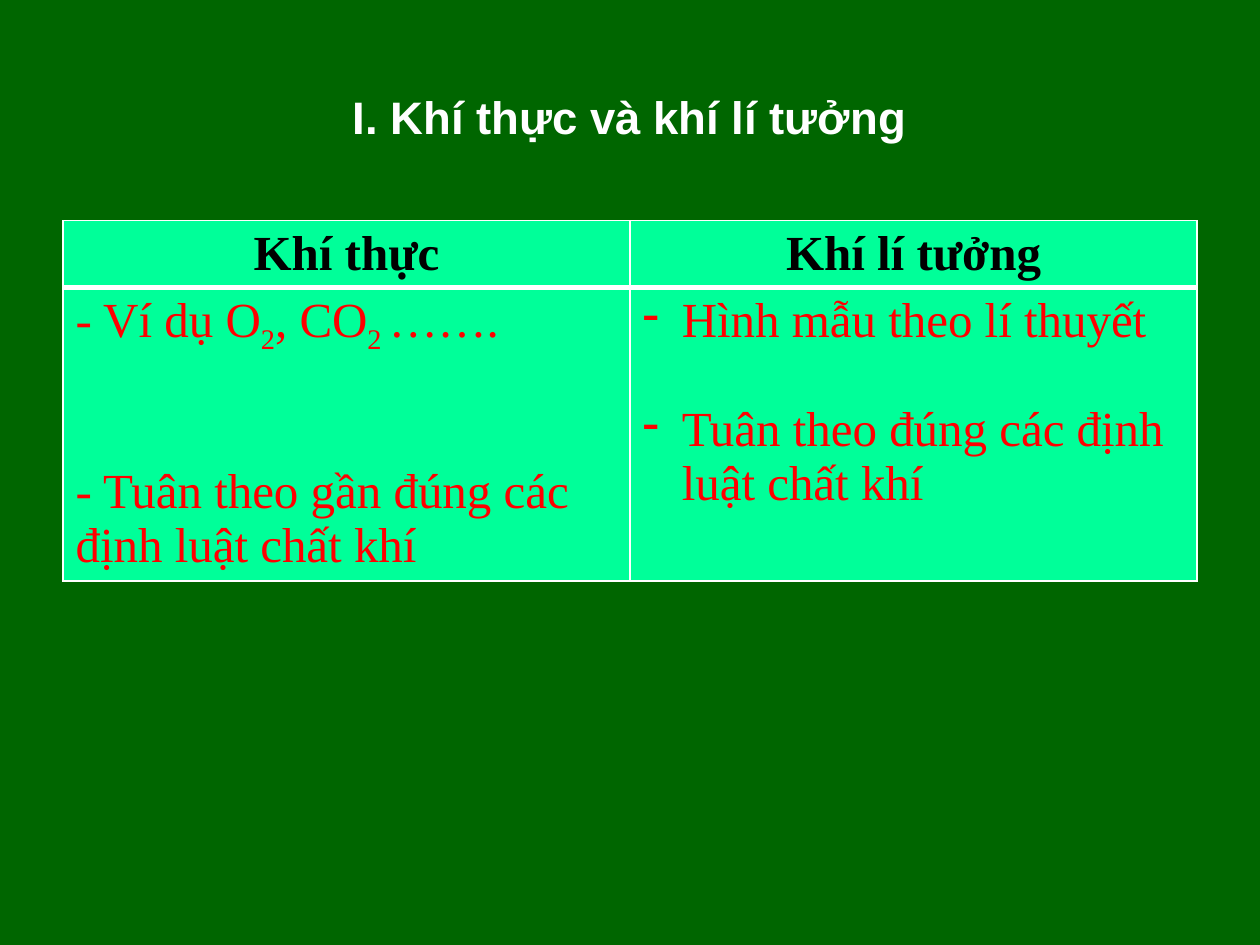
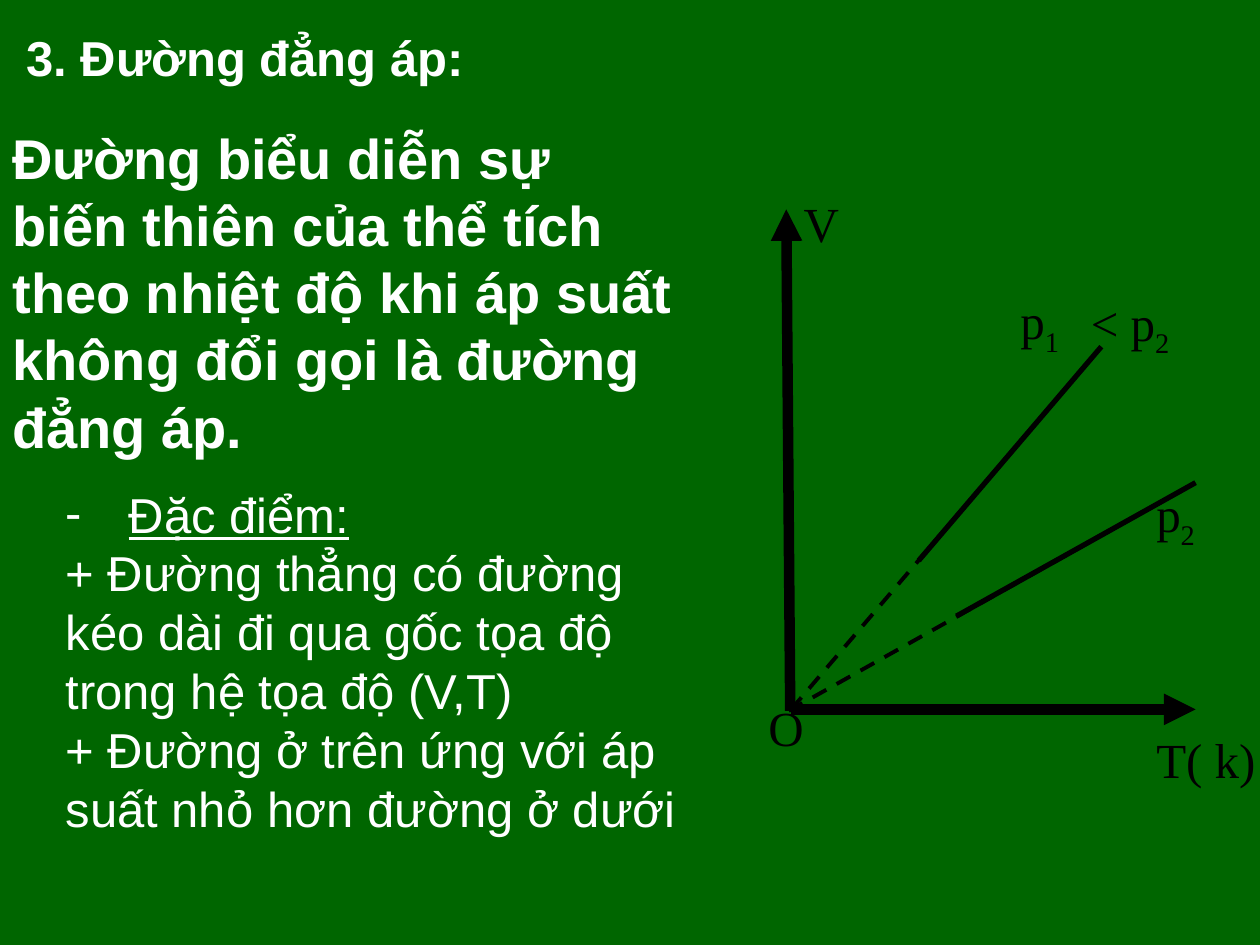
from pptx import Presentation
from pptx.dml.color import RGBColor
from pptx.enum.dml import MSO_LINE
from pptx.enum.shapes import MSO_CONNECTOR
from pptx.enum.text import MSO_ANCHOR, MSO_AUTO_SIZE, PP_ALIGN
from pptx.oxml.ns import qn
from pptx.util import Cm, Pt
from lxml.etree import SubElement as Sub

GREEN, MINT, RED = "006600", "00FF99", "FF0000"
WHITE, BLACK = "FFFFFF", "000000"
SANS, SERIF = "Arial", "Times New Roman"

# Text between bars is subscript; each paragraph is (text, options).
GAS = {
    "title": "I. Khí thực và khí lí tưởng",
    "heads": ["Khí thực", "Khí lí tưởng"],
    "cells": [
        [("- Ví dụ O|2|, CO|2 |…….", {}),
         ("- Tuân theo gần đúng các định luật chất khí", {"gap": 62})],
        [("Hình mẫu theo lí thuyết", {"dash": 0.79}),
         ("Tuân theo đúng các định luật chất khí", {"dash": 0.79, "gap": 31})],
    ],
}
CURVE = {
    "title": "3. Đường đẳng áp:",
    "lead": "Đường biểu diễn sự biến thiên của thể tích theo nhiệt độ "
            "khi áp suất không đổi gọi là đường đẳng áp.",
    "traits": [
        ("Đặc điểm:", {"dash": 1.27, "under": True}),
        ("+ Đường thẳng có đường kéo dài đi qua gốc tọa độ "
         "trong hệ tọa độ (V,T)", {}),
        ("+ Đường ở trên ứng với áp suất nhỏ hơn đường ở dưới", {}),
    ],
    "marks": [
        ("T( k)", 23.06, 14.58, 2.87), ("V", 15.95, 3.78, 1),
        ("O", 15.24, 13.94, 1), ("p|2", 23.06, 9.63, 1.96),
        ("p|1", 20.32, 5.74, 1.83), ("< p|2", 21.74, 5.77, 2.82),
    ],
    "axes": [((15.95, 14.3), (24.1, 14.3)), ((15.93, 14.33), (15.85, 4.22))],
    "rays": [((15.9, 14.33), (19.28, 12.42), (24.1, 9.73)),
             ((15.95, 14.3), (18.52, 11.3), (22.2, 6.99))],
}


def paint(code):
    """Turn a hex string into a colour."""
    return RGBColor.from_string(code)


def put(frame, paras, size=28, face=SANS, tint=WHITE, bold=False, align=PP_ALIGN.LEFT):
    """Write paragraphs into a text frame, run by run."""
    frame.word_wrap = True
    for num, (text, opts) in enumerate(paras):
        para = frame.paragraphs[0] if num == 0 else frame.add_paragraph()
        para.alignment = align
        para.space_before = Pt(opts.get("gap", 0))
        props = para._p.get_or_add_pPr()
        dash = Cm(opts.get("dash", 0))
        props.set("marL", str(dash))
        props.set("indent", str(-dash))
        if dash:
            Sub(props, qn("a:buChar")).set("char", "-")
        else:
            Sub(props, qn("a:buNone"))
        for part, words in enumerate(text.split("|")):
            run = para.add_run()
            run.text = words
            font = run.font
            font.size, font.name, font.bold = Pt(size), face, bold
            font.color.rgb = paint(tint)
            if opts.get("under"):
                font.underline = True
            if part % 2:
                run._r.get_or_add_rPr().set("baseline", "-25000")


def place(shape, left, top, wide, high):
    """Move and size a placeholder, in centimetres."""
    shape.left, shape.top = Cm(left), Cm(top)
    shape.width, shape.height = Cm(wide), Cm(high)
    shape.text_frame.auto_size = MSO_AUTO_SIZE.NONE


def head(slide, text, box, size, align):
    """Fill the slide title."""
    title = slide.shapes.title
    place(title, *box)
    title.text_frame.vertical_anchor = MSO_ANCHOR.MIDDLE
    put(title.text_frame, [(text, {})], size, bold=True, align=align)


def note(slide, text, box, **style):
    """Add a text box with one paragraph."""
    shape = slide.shapes.add_textbox(*map(Cm, box))
    put(shape.text_frame, [(text, {})], **style)


def line(slide, start, end, width, dash=False, arrow=False):
    """Draw a straight black line."""
    link = slide.shapes.add_connector(
        MSO_CONNECTOR.STRAIGHT, *map(Cm, start + end))
    link.line.color.rgb = paint(BLACK)
    link.line.width = Pt(width)
    if dash:
        link.line.dash_style = MSO_LINE.DASH
    if arrow:
        Sub(link.line._get_or_add_ln(), qn("a:tailEnd")).set("type", "triangle")
    Sub(link._element.spPr, qn("a:effectLst"))


def edge(cell, **widths):
    """Give a cell white borders and a mint fill."""
    props = cell._tc.get_or_add_tcPr()
    for side in "LRTB":
        rule = Sub(props, qn("a:ln" + side), w=str(Pt(widths.get(side, 1))))
        Sub(Sub(rule, qn("a:solidFill")), qn("a:srgbClr")).set("val", WHITE)
    cell.fill.solid()
    cell.fill.fore_color.rgb = paint(MINT)


def gases(deck):
    """Build the table slide on real and ideal gases."""
    slide = deck.slides.add_slide(deck.slide_layouts[5])
    head(slide, GAS["title"], (1.27, 0.76, 22.86, 3.18), 26, PP_ALIGN.CENTER)
    table = slide.shapes.add_table(
        2, 2, Cm(1.27), Cm(4.45), Cm(22.86), Cm(7.26)).table
    table.first_row = table.horz_banding = False
    table.rows[0].height, table.rows[1].height = Cm(1.35), Cm(5.91)
    for col, (name, paras) in enumerate(zip(GAS["heads"], GAS["cells"])):
        top, low = table.cell(0, col), table.cell(1, col)
        edge(top, B=3)
        edge(low, T=3)
        put(top.text_frame, [(name, {})], face=SERIF, tint=BLACK, bold=True,
            align=PP_ALIGN.CENTER)
        put(low.text_frame, paras, face=SERIF, tint=RED)


def isobar(deck):
    """Build the slide with the isobar graph."""
    slide = deck.slides.add_slide(deck.slide_layouts[1])
    head(slide, CURVE["title"], (0.28, 0.43, 22.86, 1.45), 28, PP_ALIGN.LEFT)
    body = slide.placeholders[1]
    place(body, 1.07, 9.63, 13.44, 7.44)
    put(body.text_frame, CURVE["traits"])
    for text, left, top, wide in CURVE["marks"]:
        note(slide, text, (left, top, wide, 1.45), face=SERIF, tint=BLACK)
    for start, end in CURVE["axes"]:
        line(slide, start, end, 6, arrow=True)
    for start, mid, end in CURVE["rays"]:
        line(slide, start, end, 2.25, dash=True)
        line(slide, mid, end, 3)
    note(slide, CURVE["lead"], (0, 2.36, 13.97, 7.09), size=32, bold=True)


def main():
    """Build and save the deck."""
    deck = Presentation()
    deck.slide_width, deck.slide_height = Cm(25.4), Cm(19.05)
    back = deck.slide_master.background.fill
    back.solid()
    back.fore_color.rgb = paint(GREEN)
    gases(deck)
    isobar(deck)
    deck.save("out.pptx")


if __name__ == "__main__":
    main()
